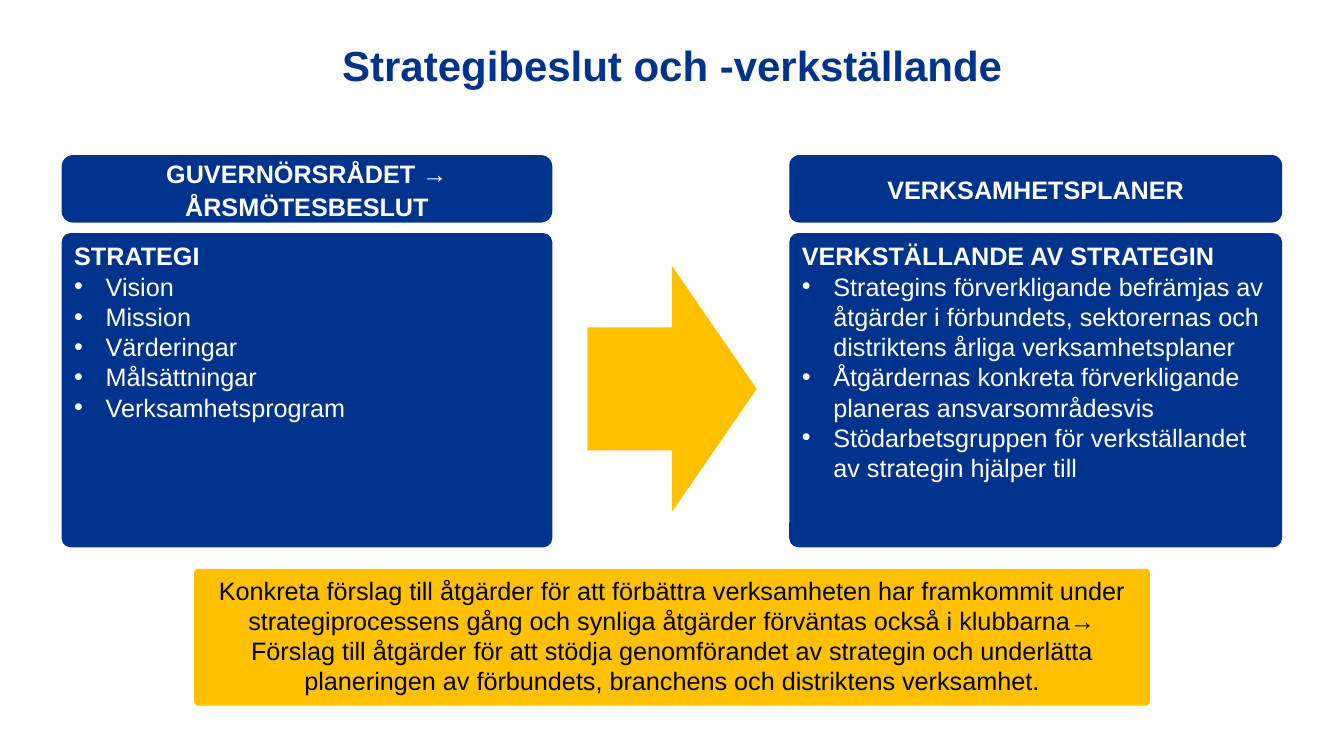
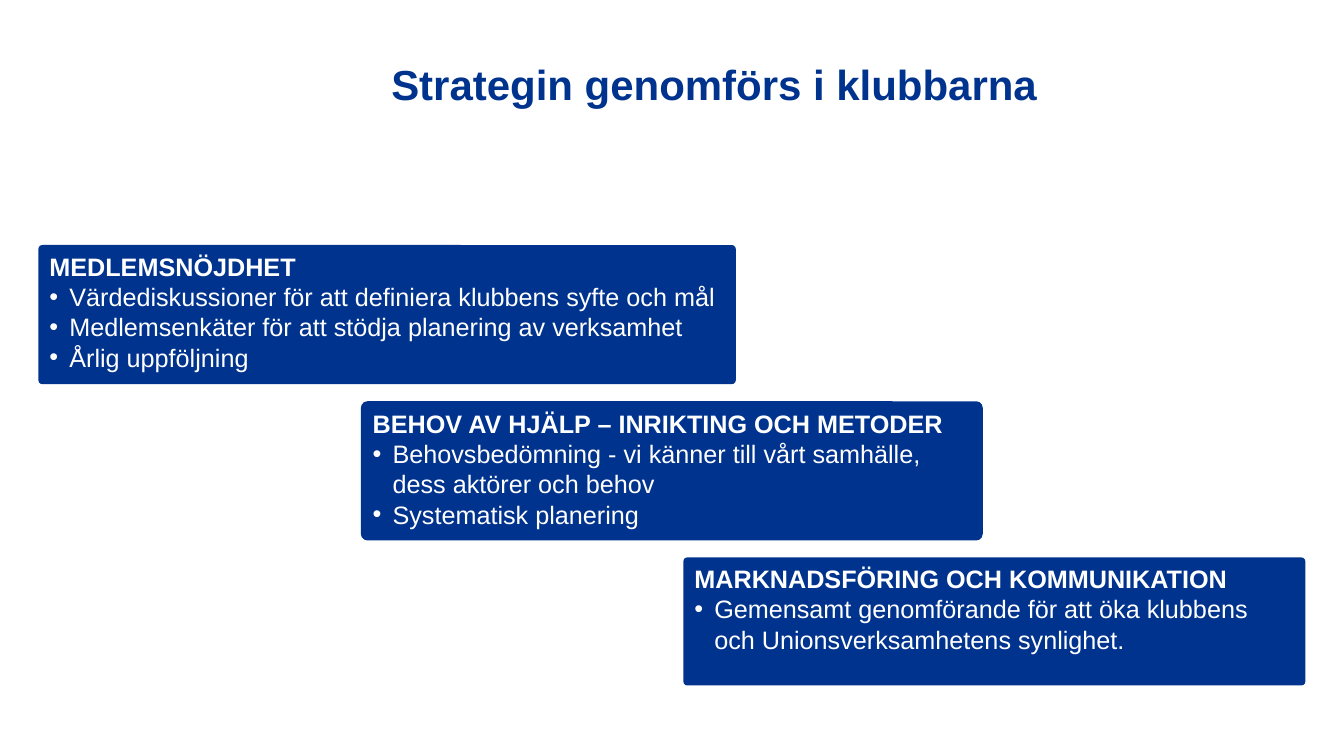
from pptx import Presentation
from pptx.dml.color import RGBColor
from pptx.enum.shapes import MSO_SHAPE as Shape
from pptx.enum.text import MSO_ANCHOR as Anchor, PP_ALIGN as Align
from pptx.oxml.ns import qn
from pptx.util import Pt
from lxml.etree import SubElement

BLUE, GOLD, WHITE, BLACK = "00338D", "FFC000", "FFFFFF", "000000"
FONT = "Arial"

DECISION_TITLE = "Strategibeslut och -verkställande"
COLUMNS = [
    (44, 350.5, 0.169, "GUVERNÖRSRÅDET → ÅRSMÖTESBESLUT", "STRATEGI",
     ["Vision", "Mission", "Värderingar", "Målsättningar", "Verksamhetsprogram"]),
    (563.8, 352, 0.151, "VERKSAMHETSPLANER", "VERKSTÄLLANDE AV STRATEGIN",
     ["Strategins förverkligande befrämjas av åtgärder i förbundets, sektorernas och "
      "distriktens årliga verksamhetsplaner",
      "Åtgärdernas konkreta förverkligande planeras ansvarsområdesvis",
      "Stödarbetsgruppen för verkställandet av strategin hjälper till"]),
]
PROPOSALS = (
    "Konkreta förslag till åtgärder för att förbättra verksamheten har framkommit under "
    "strategiprocessens gång och synliga åtgärder förväntas också i klubbarna→ "
    "Förslag till åtgärder för att stödja genomförandet av strategin och underlätta "
    "planeringen av förbundets, branchens och distriktens verksamhet.")

CLUB_TITLE = "Strategin genomförs i klubbarna"
CLUB_STEPS = [
    (498.2, 99.4, 0.029, "MEDLEMSNÖJDHET",
     ["Värdediskussioner för att definiera klubbens syfte och mål",
      "Medlemsenkäter för att stödja planering av verksamhet",
      "Årlig uppföljning"]),
    (444.2, 99.4, 0.047, "BEHOV AV HJÄLP – INRIKTING OCH METODER",
     ["Behovsbedömning - vi känner till vårt samhälle, dess aktörer och behov",
      "Systematisk planering"]),
    (444.2, 91.4, 0.029, "MARKNADSFÖRING OCH KOMMUNIKATION",
     ["Gemensamt genomförande för att öka klubbens och Unionsverksamhetens synlighet."]),
]
STEP_LEFT, STEP_TOP, STEP_RIGHT, STEP_DOWN = 27.4, 175, 230.4, 111.6


def rgb(color):
    return RGBColor.from_string(color)


def write(paragraph, text, size=18, color=WHITE, bold=False, align=Align.LEFT, indent=0):
    paragraph.alignment = align
    if indent:
        props = paragraph._p.get_or_add_pPr()
        props.set("marL", str(Pt(indent)))
        props.set("indent", str(-Pt(indent)))
        SubElement(props, qn("a:buFont"), typeface=FONT)
        SubElement(props, qn("a:buChar"), char="•")
    run = paragraph.add_run()
    run.text = text
    run.font.name, run.font.size, run.font.bold = FONT, Pt(size), bold
    run.font.color.rgb = rgb(color)


def add_block(slide, kind, place, fill=BLUE, corner=None, anchor=Anchor.TOP):
    block = slide.shapes.add_shape(kind, *map(Pt, place))
    block.shadow.inherit = False
    block.fill.solid()
    block.fill.fore_color.rgb = rgb(fill)
    block.line.fill.background()
    if corner is not None:
        block.adjustments[0] = corner
    block.text_frame.word_wrap = True
    block.text_frame.vertical_anchor = anchor
    return block.text_frame


def add_panel(slide, place, corner, heading, points, indent):
    frame = add_block(slide, Shape.ROUNDED_RECTANGLE, place, corner=corner)
    write(frame.paragraphs[0], heading, bold=True)
    for point in points:
        write(frame.add_paragraph(), point, indent=indent)


def add_titled_slide(deck, title, left, top):
    slide = deck.slides.add_slide(deck.slide_layouts[6])
    frame = slide.shapes.add_textbox(Pt(left), Pt(top), Pt(594.7), Pt(44)).text_frame
    frame.word_wrap = True
    write(frame.paragraphs[0], title, size=30, color=BLUE, bold=True, align=Align.CENTER)
    return slide


def build_decision(deck):
    slide = add_titled_slide(deck, DECISION_TITLE, 183, 24.5)
    for left, width, corner, header, heading, points in COLUMNS:
        frame = add_block(slide, Shape.ROUNDED_RECTANGLE, (left, 110.8, width, 48.2),
                          corner=corner, anchor=Anchor.MIDDLE)
        write(frame.paragraphs[0], header, bold=True, align=Align.CENTER)
        frame.paragraphs[0].line_spacing = 1.07
        frame.paragraphs[0].space_after = Pt(8)
        add_panel(slide, (left, 166.5, width, 224.5), 0.029, heading, points, 22.5)
    add_block(slide, Shape.RIGHT_ARROW, (419.5, 190, 121, 175.6), fill=GOLD)
    frame = add_block(slide, Shape.ROUNDED_RECTANGLE, (138.7, 406.3, 682.6, 97.7),
                      fill=GOLD, corner=0.029)
    write(frame.paragraphs[0], PROPOSALS, color=BLACK, align=Align.CENTER)


def build_clubs(deck):
    slide = add_titled_slide(deck, CLUB_TITLE, 213, 38.3)
    for i, (width, height, corner, heading, points) in enumerate(CLUB_STEPS):
        place = STEP_LEFT + i * STEP_RIGHT, STEP_TOP + i * STEP_DOWN, width, height
        add_panel(slide, place, corner, heading, points, 14.2)


def main():
    """Build the two strategy slides."""
    deck = Presentation()
    deck.slide_width, deck.slide_height = Pt(960), Pt(540)
    build_decision(deck)
    build_clubs(deck)
    deck.save("out.pptx")


if __name__ == "__main__":
    main()
